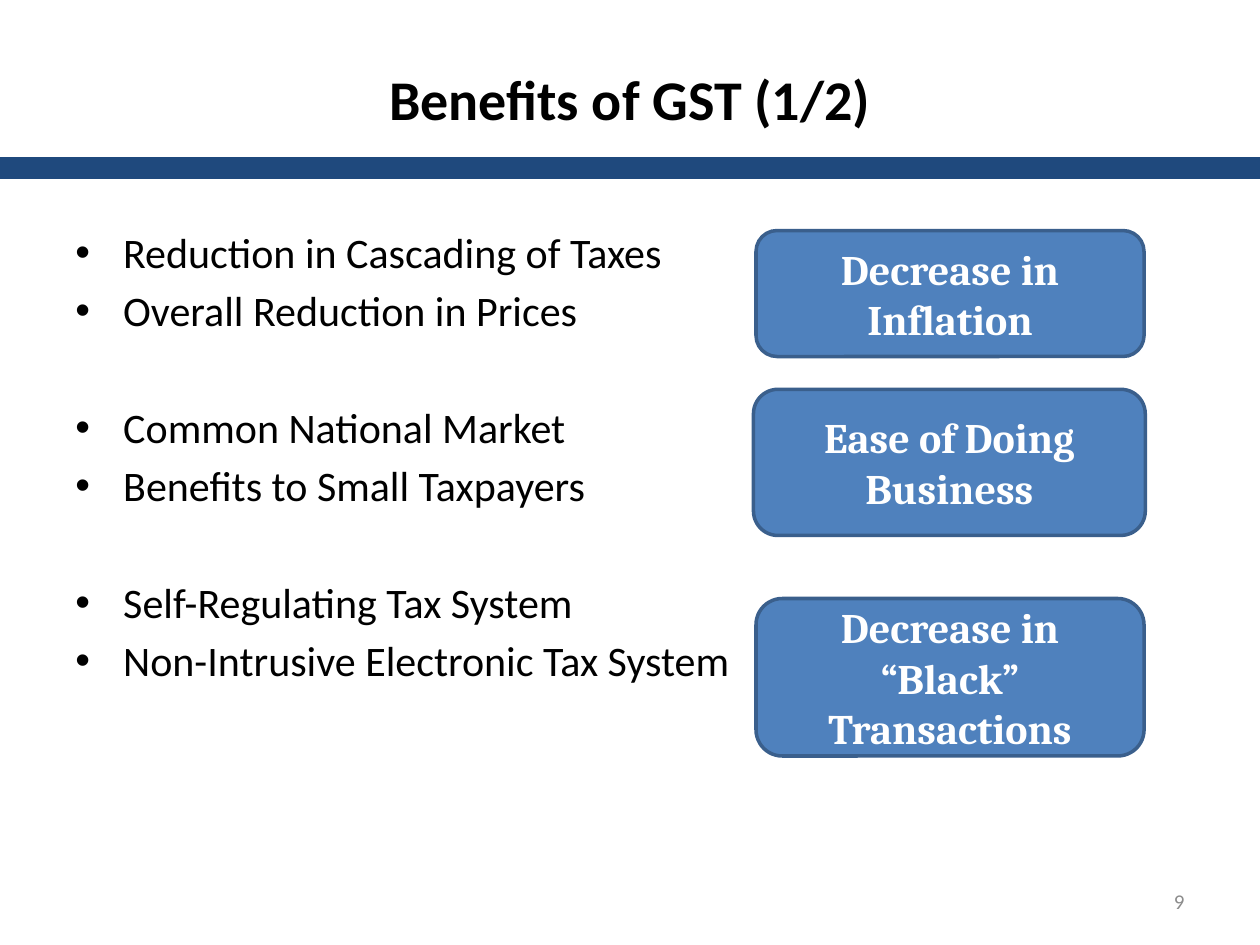
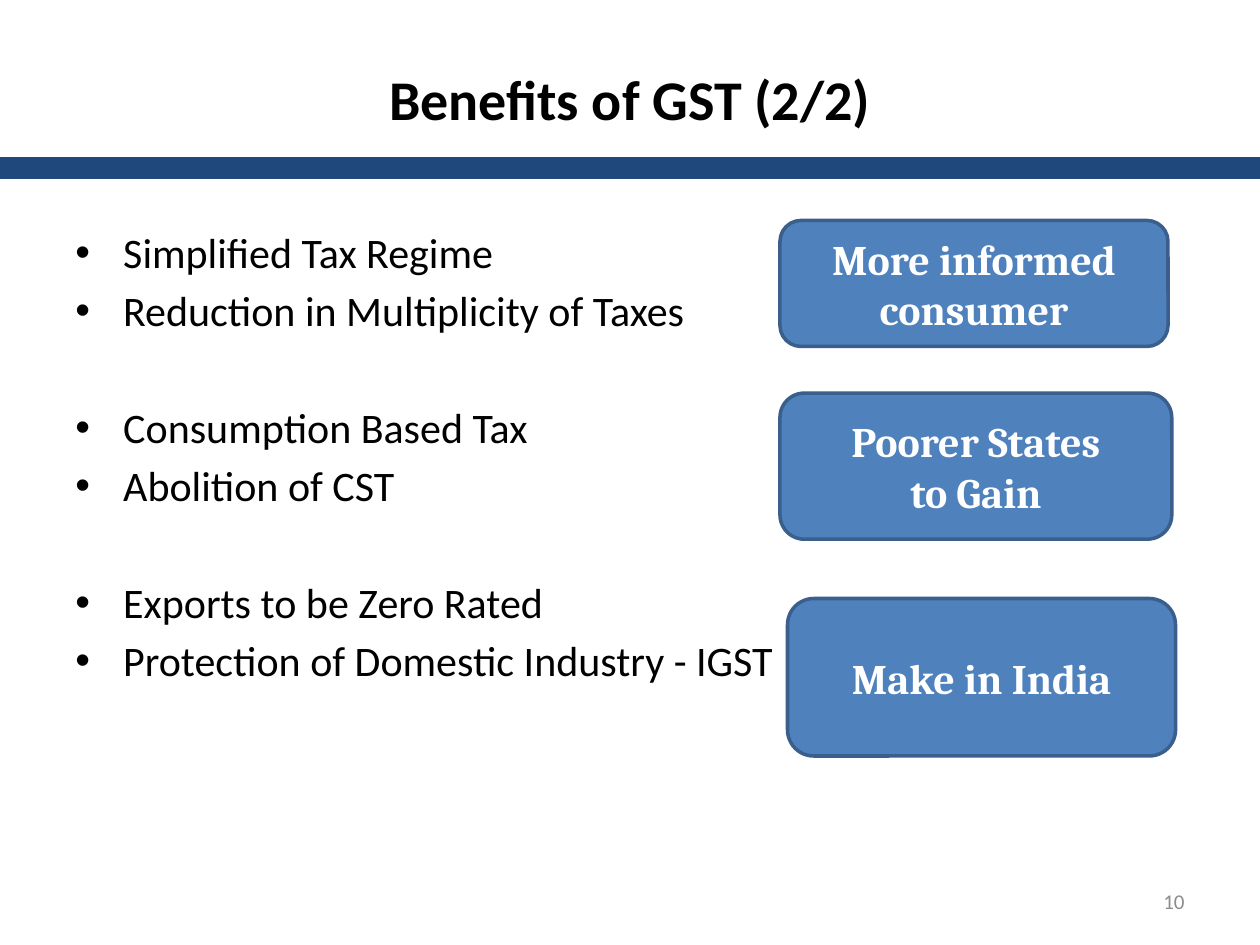
from lxml import etree
from pptx import Presentation
from pptx.dml.color import RGBColor
from pptx.enum.shapes import MSO_SHAPE
from pptx.enum.text import MSO_ANCHOR, PP_ALIGN
from pptx.oxml.ns import qn
from pptx.util import Inches, Pt

RECTANGLE = MSO_SHAPE.RECTANGLE
ROUNDED = MSO_SHAPE.ROUNDED_RECTANGLE
MIDDLE = MSO_ANCHOR.MIDDLE
LEFT, CENTER, RIGHT = PP_ALIGN.LEFT, PP_ALIGN.CENTER, PP_ALIGN.RIGHT

NAVY = RGBColor(0x1F, 0x49, 0x7D)
BLUE = RGBColor(0x4F, 0x81, 0xBD)
OUTLINE = RGBColor(0x3A, 0x5F, 0x8C)
BLACK = RGBColor(0x00, 0x00, 0x00)
WHITE = RGBColor(0xFF, 0xFF, 0xFF)
GREY = RGBColor(0x8C, 0x8C, 0x8C)

TITLE_FONT = {"name": "Calibri", "size": Pt(32), "bold": True}
BODY_FONT = {"name": "Calibri", "size": Pt(24)}
OUTCOME_FONT = {"name": "Cambria", "size": Pt(24), "bold": True}
NUMBER_FONT = {"name": "Calibri", "size": Pt(12)}

BULLET_INDENT = Inches(0.38)
BULLET_SPACE = Pt(4.3)
GROUP_SPACE = Pt(38)

SLIDES = [
    {
        "title": "Benefits of GST (1/2)",
        "number": 9,
        "benefits": [
            ["Reduction in Cascading of Taxes", "Overall Reduction in Prices"],
            ["Common National Market", "Benefits to Small Taxpayers"],
            ["Self-Regulating Tax System", "Non-Intrusive Electronic Tax System"],
        ],
        "outcomes": [
            (["Decrease in", "Inflation"], (6, 1.83, 3.08, 1)),
            (["Ease of Doing Business"], (5.98, 3.09, 3.11, 1.16)),
            (["Decrease in “Black” Transactions"], (6, 4.75, 3.08, 1.25)),
        ],
    },
    {
        "title": "Benefits of GST (2/2)",
        "number": 10,
        "benefits": [
            ["Simplified Tax Regime", "Reduction in Multiplicity of Taxes"],
            ["Consumption Based Tax", "Abolition of CST"],
            ["Exports to be Zero Rated", "Protection of Domestic Industry - IGST"],
        ],
        "outcomes": [
            (["More informed consumer"], (6.19, 1.75, 3.08, 1)),
            (["Poorer States", "to Gain"], (6.19, 3.12, 3.11, 1.16)),
            (["Make in India"], (6.25, 4.75, 3.08, 1.25)),
        ],
    },
]


def lengths(box):
    return [Inches(value) for value in box]


def format_paragraph(paragraph, font_format, color, alignment):
    paragraph.alignment = alignment
    for name, value in font_format.items():
        setattr(paragraph.font, name, value)
    paragraph.font.color.rgb = color


def write_lines(text_frame, lines, font_format, color, alignment):
    text_frame.word_wrap = True
    text_frame.text = "\n".join(lines)
    for paragraph in text_frame.paragraphs:
        format_paragraph(paragraph, font_format, color, alignment)


def add_panel(slide, kind, box, fill, line, line_width):
    shape = slide.shapes.add_shape(kind, *lengths(box))
    shape.shadow.inherit = False
    shape.fill.solid()
    shape.fill.fore_color.rgb = fill
    shape.line.color.rgb = line
    shape.line.width = Pt(line_width)
    return shape


def add_title(slide, text):
    title = slide.shapes.title
    title.left, title.top, title.width, title.height = lengths((0.5, 0.3, 9, 0.95))
    title.text_frame.vertical_anchor = MIDDLE
    write_lines(title.text_frame, [text], TITLE_FONT, BLACK, CENTER)


def add_bullet(paragraph):
    properties = paragraph._p.get_or_add_pPr()
    properties.set("marL", str(BULLET_INDENT))
    properties.set("indent", str(-BULLET_INDENT))
    etree.SubElement(properties, qn("a:buFont"), typeface="Arial")
    etree.SubElement(properties, qn("a:buChar"), char="•")


def add_benefits(slide, groups):
    text_frame = slide.shapes.add_textbox(*lengths((0.5, 1.75, 9, 4.95))).text_frame
    text_frame.word_wrap = True
    for group_index, group in enumerate(groups):
        for item_index, benefit in enumerate(group):
            first = group_index == item_index == 0
            paragraph = text_frame.paragraphs[0] if first else text_frame.add_paragraph()
            paragraph.text = benefit
            add_bullet(paragraph)
            format_paragraph(paragraph, BODY_FONT, BLACK, LEFT)
            if not first:
                paragraph.space_before = BULLET_SPACE if item_index else GROUP_SPACE


def add_outcome(slide, lines, box):
    shape = add_panel(slide, ROUNDED, box, BLUE, OUTLINE, 2)
    shape.text_frame.vertical_anchor = MIDDLE
    write_lines(shape.text_frame, lines, OUTCOME_FONT, WHITE, CENTER)


def add_slide_number(slide, number):
    text_frame = slide.shapes.add_textbox(*lengths((7.17, 6.95, 2.33, 0.4))).text_frame
    text_frame.vertical_anchor = MIDDLE
    write_lines(text_frame, [str(number)], NUMBER_FONT, GREY, RIGHT)


def add_benefits_slide(presentation, content):
    slide = presentation.slides.add_slide(presentation.slide_layouts.get_by_name("Title Only"))
    add_panel(slide, RECTANGLE, (0, 1.25, 10, 0.17), NAVY, NAVY, 0.75)
    add_title(slide, content["title"])
    add_benefits(slide, content["benefits"])
    add_slide_number(slide, content["number"])
    for lines, box in content["outcomes"]:
        add_outcome(slide, lines, box)


def main():
    presentation = Presentation()
    presentation.slide_width = Inches(10)
    presentation.slide_height = Inches(7.5)
    for content in SLIDES:
        add_benefits_slide(presentation, content)
    presentation.save("out.pptx")


if __name__ == "__main__":
    main()
